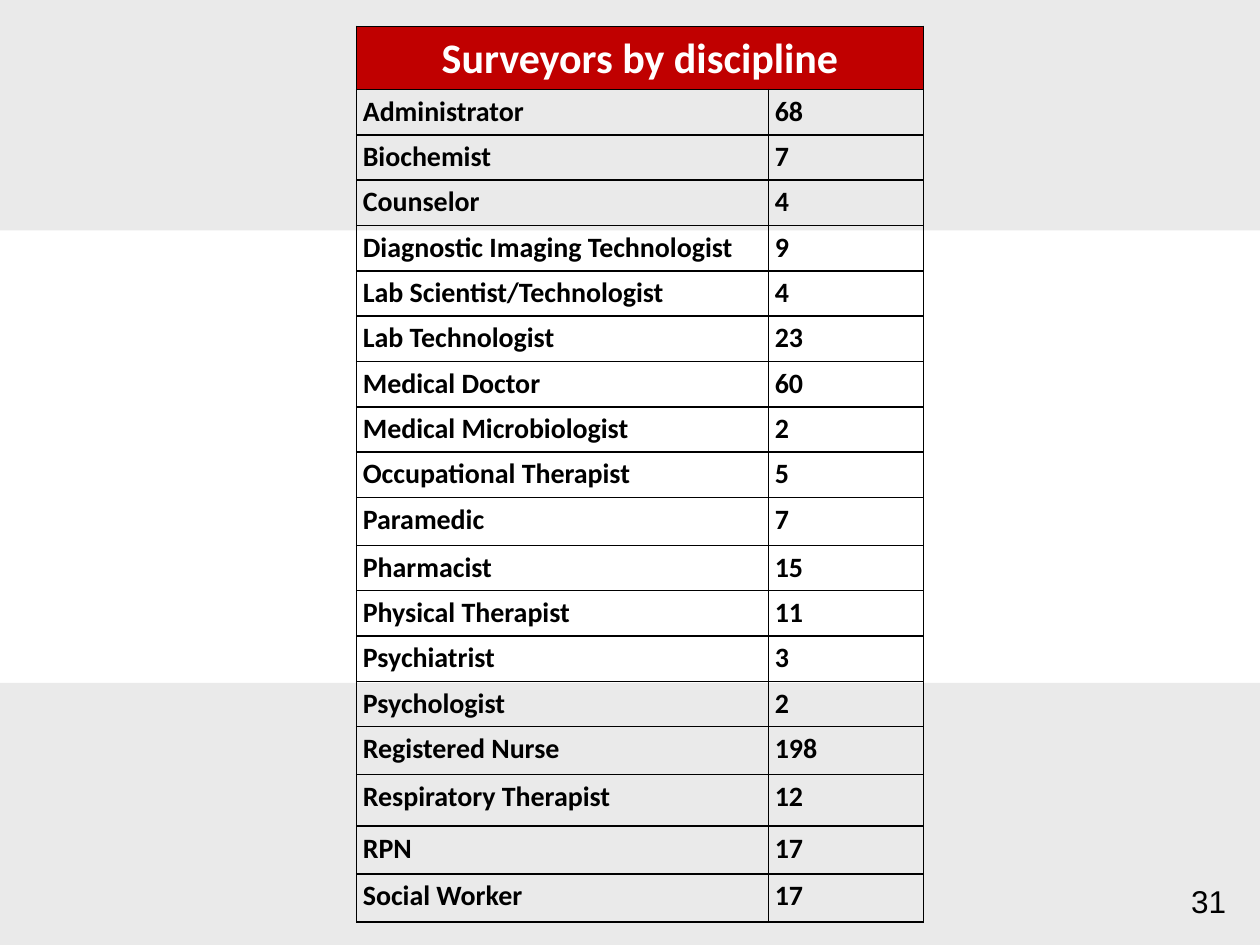
from lxml import etree
from pptx import Presentation
from pptx import util as u
from pptx.dml.color import RGBColor
from pptx.enum import shapes, text
from pptx.oxml.ns import qn

STAFF = [
    ("Administrator", 68),
    ("Biochemist", 7),
    ("Counselor", 4),
    ("Diagnostic Imaging Technologist", 9),
    ("Lab Scientist/Technologist", 4),
    ("Lab Technologist", 23),
    ("Medical Doctor", 60),
    ("Medical Microbiologist", 2),
    ("Occupational Therapist", 5),
    ("Paramedic", 7),
    ("Pharmacist", 15),
    ("Physical Therapist", 11),
    ("Psychiatrist", 3),
    ("Psychologist", 2),
    ("Registered Nurse", 198),
    ("Respiratory Therapist", 12),
    ("RPN", 17),
    ("Social Worker", 17),
]
TALL = {"Paramedic": 0.38, "Registered Nurse": 0.38, "Respiratory Therapist": 0.41,
        "RPN": 0.38, "Social Worker": 0.38}


def color(code):
    return RGBColor.from_string(code)


def inches(*box):
    return [u.Inches(n) for n in box]


def style(para, font, size, tint, bold, align):
    para.alignment = align
    para.font.name = font
    para.font.size = u.Pt(size)
    para.font.bold = bold
    para.font.color.rgb = color(tint)


def add_band(slide, box):
    band = slide.shapes.add_shape(shapes.MSO_SHAPE.RECTANGLE, *inches(*box))
    band.shadow.inherit = False
    band.fill.solid()
    band.fill.fore_color.rgb = color("EAEAEA")
    band.line.fill.background()


def add_number(slide, box, number):
    frame = slide.shapes.add_textbox(*inches(*box)).text_frame
    frame.word_wrap = True
    frame.vertical_anchor = text.MSO_ANCHOR.MIDDLE
    para = frame.paragraphs[0]
    para.text = number
    style(para, "Arial", 18, "000000", False, text.PP_ALIGN.RIGHT)


def add_border(cell):
    props = cell._tc.get_or_add_tcPr()
    for side in ("lnL", "lnR", "lnT", "lnB"):
        line = etree.SubElement(props, qn("a:" + side), w=str(u.Pt(1)))
        fill = etree.SubElement(line, qn("a:solidFill"))
        etree.SubElement(fill, qn("a:srgbClr"), val="000000")


def fill_cell(cell, words, size=16, tint="000000", align=text.PP_ALIGN.LEFT):
    cell.margin_left = cell.margin_right = u.Inches(0.05)
    cell.margin_top = cell.margin_bottom = 0
    para = cell.text_frame.paragraphs[0]
    para.text = words
    para.line_spacing = 1.15
    para.space_after = u.Pt(10)
    style(para, "Calibri", size, tint, True, align)


def add_staff(slide, box):
    table = slide.shapes.add_table(len(STAFF) + 1, 2, *inches(*box)).table
    table.first_row = table.horz_banding = False
    for col, width in zip(table.columns, (3.27, 1.23)):
        col.width = u.Inches(width)
    for cell in table.iter_cells():
        add_border(cell)
        cell.fill.background()

    table.rows[0].height = u.Inches(0.5)
    head = table.cell(0, 0)
    head.merge(table.cell(0, 1))
    head.fill.solid()
    head.fill.fore_color.rgb = color("C00000")
    fill_cell(head, "Surveyors by discipline", 24, "FFFFFF", text.PP_ALIGN.CENTER)

    for row, (job, count) in enumerate(STAFF, 1):
        table.rows[row].height = u.Inches(TALL.get(job, 0.36))
        fill_cell(table.cell(row, 0), job)
        fill_cell(table.cell(row, 1), str(count))


def main():
    deck = Presentation()
    deck.slide_width, deck.slide_height = inches(10, 7.5)
    slide = deck.slides.add_slide(deck.slide_layouts[6])
    add_band(slide, (0, 0, 10, 1.83))
    add_band(slide, (0, 5.42, 10, 2.08))
    add_number(slide, (7.5, 6.95, 2.33, 0.4), "31")
    add_staff(slide, (2.83, 0.21, 4.5, 7.15))
    deck.save("out.pptx")


if __name__ == "__main__":
    main()
